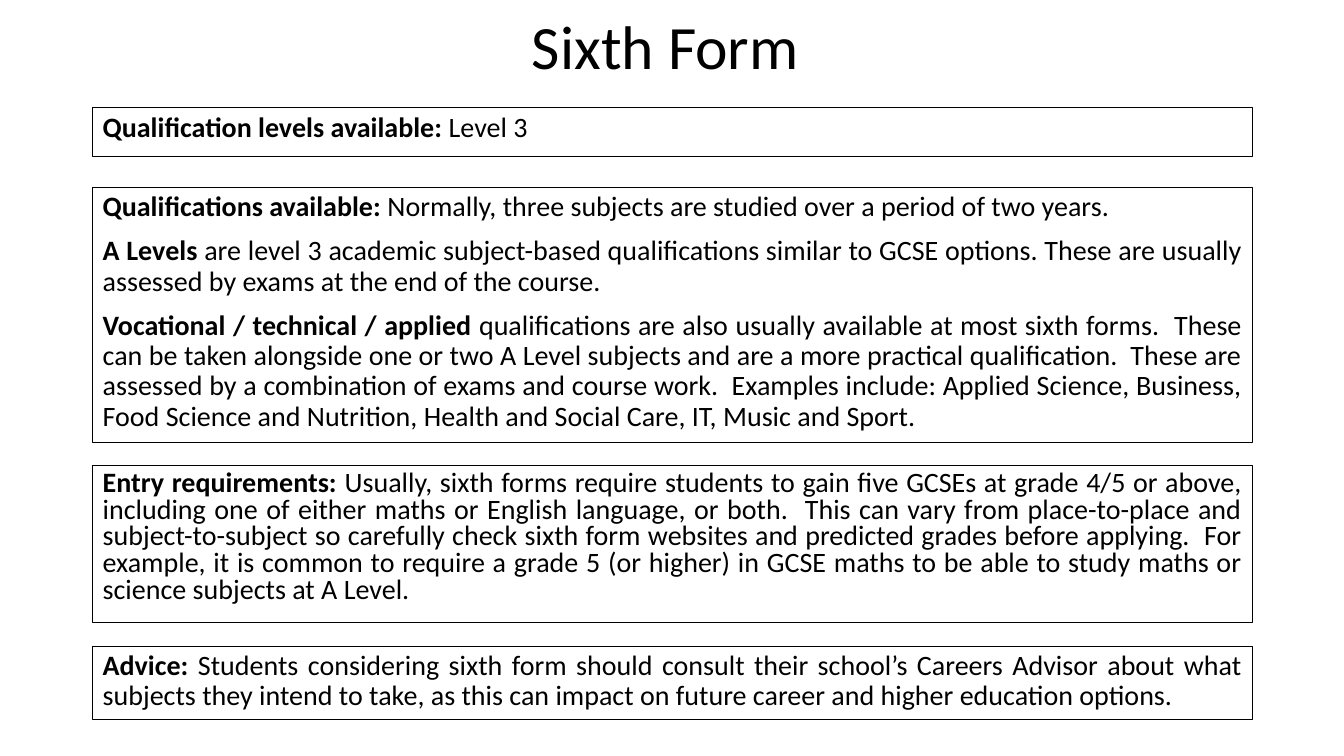
"""Build the Sixth Form slide: a title above four outlined text panels."""
from pptx import Presentation
from pptx.dml.color import RGBColor
from pptx.enum.text import MSO_ANCHOR, PP_ALIGN as AL
from pptx.util import Pt

PX = 9144
THEME = {
    "font": "Calibri",
    "ink": RGBColor(0, 0, 0),
    "title": Pt(44),
    "body": Pt(20),
    "border": Pt(0.75),
    "gap": Pt(10),
}
LEFT, WIDTH = 92, 1150

PANELS = [
    (107, 48, AL.LEFT, 0.9, [
        ("Qualification levels available: ", "Level 3"),
    ]),
    (186, 253, AL.JUSTIFY, 0.9, [
        ("Qualifications available: ",
         "Normally, three subjects are studied over a period of two years."),
        ("A Levels ",
         "are level 3 academic subject-based qualifications similar to GCSE options. "
         "These are usually assessed by exams at the end of the course."),
        ("Vocational / technical / applied ",
         "qualifications are also usually available at most sixth forms.  "
         "These can be taken alongside one or two A Level subjects and are a more "
         "practical qualification.  These are assessed by a combination of exams and "
         "course work.  Examples include: Applied Science, Business, Food Science and "
         "Nutrition, Health and Social Care, IT, Music and Sport."),
    ]),
    (462, 156, AL.JUSTIFY, 0.8, [
        ("Entry requirements: ",
         "Usually, sixth forms require students to gain five GCSEs at grade 4/5 or "
         "above, including one of either maths or English language, or both.  This can "
         "vary from place-to-place and subject-to-subject so carefully check sixth form "
         "websites and predicted grades before applying.  For example, it is common to "
         "require a grade 5 (or higher) in GCSE maths to be able to study maths or "
         "science subjects at A Level."),
    ]),
    (641, 73, AL.JUSTIFY, 0.9, [
        ("Advice: ",
         "Students considering sixth form should consult their school’s Careers Advisor "
         "about what subjects they intend to take, as this can impact on future career "
         "and higher education options."),
    ]),
]


def add_box(top, height):
    box = s.shapes.add_textbox(LEFT * PX, top * PX, WIDTH * PX, height * PX)
    box.text_frame.word_wrap = True
    return box


def add_run(p, text, size, bold=False):
    r = p.add_run()
    r.text = text
    r.font.name = THEME["font"]
    r.font.size = size
    r.font.bold = bold
    r.font.color.rgb = THEME["ink"]


prs = Presentation()
prs.slide_width, prs.slide_height = 1333 * PX, 750 * PX
s = prs.slides.add_slide(prs.slide_layouts[6])

tf = add_box(0, 99).text_frame
tf.vertical_anchor = MSO_ANCHOR.MIDDLE
p = tf.paragraphs[0]
p.alignment = AL.CENTER
p.line_spacing = 0.9
add_run(p, "Sixth Form ", THEME["title"])

for top, height, align, spacing, paragraphs in PANELS:
    panel = add_box(top, height)
    panel.line.color.rgb = THEME["ink"]
    panel.line.width = THEME["border"]
    tf = panel.text_frame
    for i, (lead, text) in enumerate(paragraphs):
        p = tf.add_paragraph() if i else tf.paragraphs[0]
        p.alignment = align
        p.line_spacing = spacing
        p.space_before = THEME["gap"]
        add_run(p, lead, THEME["body"], bold=True)
        add_run(p, text, THEME["body"])

prs.save("out.pptx")
